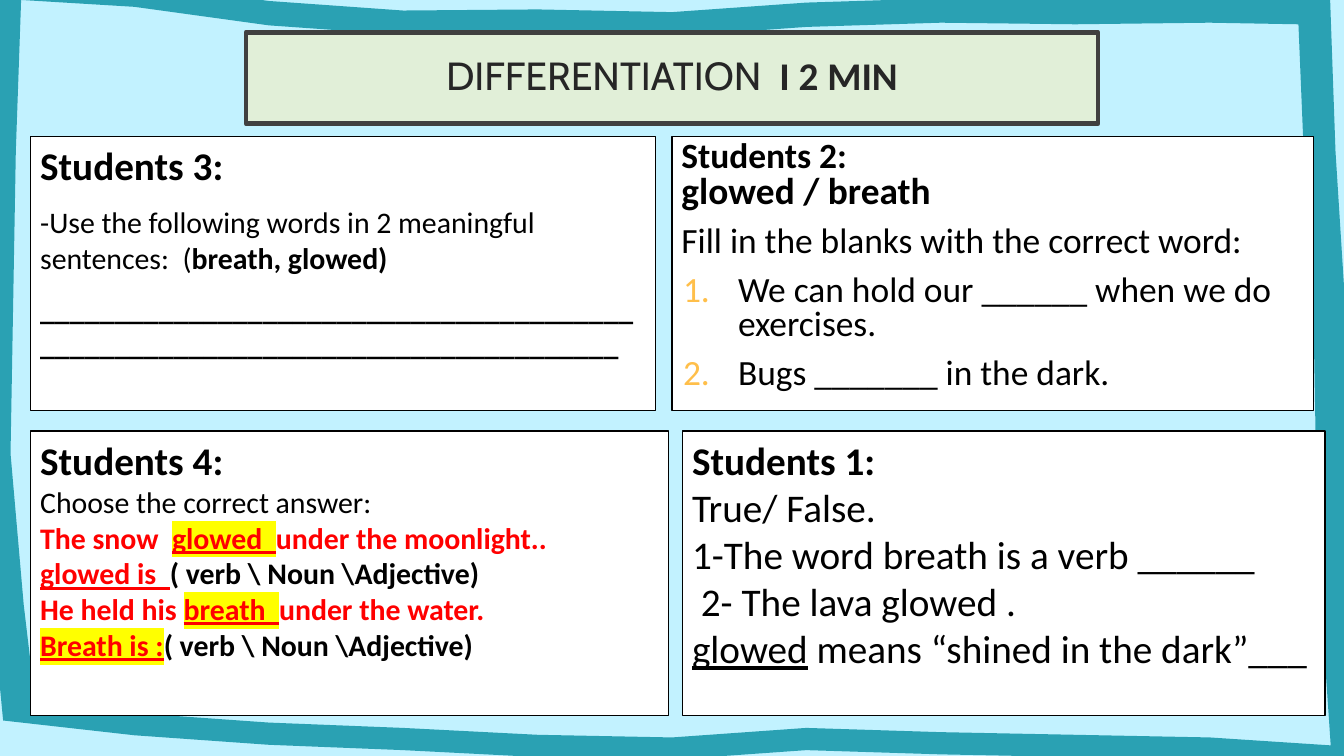
"""Build a classroom differentiation slide with four student task panels."""
from dataclasses import dataclass

from lxml import etree
from pptx import Presentation
from pptx import util as u
from pptx.dml.color import RGBColor
from pptx.enum import shapes, text
from pptx.oxml.ns import qn


@dataclass(frozen=True)
class Theme:
    sky: str = "C2F2FF"
    ribbon: str = "2AA1B3"
    banner: str = "E1EFD8"
    banner_line: str = "404040"
    banner_text: str = "262626"
    paper: str = "FFFFFF"
    ink: str = "000000"
    answer: str = "FF0000"
    marker: str = "FFFF00"
    number: str = "FFBF4A"
    display: str = "Cabin"
    body: str = "Calibri"
    large: int = 21
    medium: int = 20
    regular: int = 19
    small: int = 16


THEME = Theme()


def heading(group, size=THEME.large):
    return (size, "", [(f"Students {group}:", "bold")])


CHOICES = ("( verb \\ Noun \\Adjective)", "bold")
TITLE = [(THEME.large, "", [("DIFFERENTIATION ", "display"), (" I 2 MIN", "bold")])]
SENTENCE_WRITING = [
    heading(3),
    (THEME.small, "gap", [("-Use the following words in 2 meaningful  sentences:  (", ""),
                          ("breath, glowed)", "bold")]),
    (THEME.small, "gap", [("_" * 79, "bold")]),
]
FILL_IN_BLANKS = [
    heading(2, THEME.regular),
    (THEME.medium, "", [("glowed / breath", "bold")]),
    (THEME.regular, "gap", [("Fill in the blanks with the correct word:", "")]),
    (THEME.regular, "gap numbered", [("We can hold our ______ when we do exercises.", "")]),
    (THEME.regular, "gap numbered", [("Bugs _______ in the dark.", "")]),
]
WORD_CLASSES = [
    heading(4),
    (THEME.small, "", [("Choose the correct answer:", "")]),
    (THEME.small, "", [("The snow  ", "bold red"), ("glowed  ", "bold red underlined marked"),
                       ("under the moonlight..", "bold red")]),
    (THEME.small, "", [("glowed is  ", "bold red underlined"), CHOICES]),
    (THEME.small, "", [("He held his ", "bold red"), ("breath  ", "bold red underlined marked"),
                       ("under the water.", "bold red")]),
    (THEME.small, "", [("Breath is :", "bold red underlined marked"), CHOICES]),
]
TRUE_FALSE = [
    heading(1),
    (THEME.large, "", [("True/ False.", "")]),
    (THEME.large, "", [("1-The word breath is a verb ______", "")]),
    (THEME.large, "", [(" 2- The lava glowed .", "")]),
    (THEME.large, "", [("glowed", "underlined"), (" means “shined in the dark”___", "")]),
]

WIDTH, HEIGHT = 25.4, 14.29
BANNER_BOX = (4.65, 0.61, 16.1, 1.73)
ROWS = [
    {"top": 2.58, "height": 5.18, "panels": [(0.58, 11.81, SENTENCE_WRITING, 1),
                                             (12.7, 12.12, FILL_IN_BLANKS, 0.8)]},
    {"top": 8.15, "height": 5.38, "panels": [(0.58, 12.06, WORD_CLASSES, 1),
                                             (12.9, 12.14, TRUE_FALSE, 1)]},
]
# Depth of the ribbon's middle below each slide edge, at equal steps along that edge.
RIBBON_DEPTHS = {
    "top": [-0.23, -0.1, 0.25, 0.43, 0.41, 0.46, 0.28, 0.2, 0.23, 0.2, 0.23],
    "right": [0.56, 0.46, 0.28, 0.23, 0.13, -0.05],
    "bottom": [0.88, 0.6, 0.42, 0.32, 0.19, 0.14, 0.32, 0.24, 0.19, 0.14, -0.01],
    "left": [0.1, 0, -0.05, -0.1, 0.15, 0.36],
}
RIBBON_HALF_WIDTH = {"top": 0.23, "right": 0.3, "bottom": 0.21, "left": 0.3}


def rgb(color):
    return RGBColor.from_string(color)


def fill_with(shape, color):
    shape.shadow.inherit = False
    shape.fill.solid()
    shape.fill.fore_color.rgb = rgb(color)


def ribbon_edge(direction):
    """Return one closed edge of the ribbon, inner (1) or outer (-1), clockwise."""
    depth = {side: [middle + direction * RIBBON_HALF_WIDTH[side] for middle in middles]
             for side, middles in RIBBON_DEPTHS.items()}
    left, top = depth["left"], depth["top"]
    right = [WIDTH - inset for inset in depth["right"]]
    bottom = [HEIGHT - inset for inset in depth["bottom"]]
    columns, rows = len(top) - 1, len(left) - 1
    across = [WIDTH * step / columns for step in range(1, columns)]
    down = [HEIGHT * step / rows for step in range(1, rows)]
    top_side = list(zip([left[0], *across, right[0]], top))
    right_side = list(zip(right[1:-1], down))
    bottom_side = list(zip([left[-1], *across, right[-1]], bottom))
    left_side = list(zip(left[1:-1], down))
    outline = top_side + right_side + bottom_side[::-1] + left_side[::-1]
    return [(u.Cm(x), u.Cm(y)) for x, y in outline]


def add_ribbon(slide):
    outer, hole = ribbon_edge(-1), ribbon_edge(1)[::-1]
    builder = slide.shapes.build_freeform(*outer[0])
    builder.add_line_segments(outer[1:], close=True)
    builder.move_to(*hole[0])
    builder.add_line_segments(hole[1:], close=True)
    ribbon = builder.convert_to_shape()
    fill_with(ribbon, THEME.ribbon)
    ribbon.line.fill.background()


def add_color(parent, tag, color):
    holder = etree.SubElement(parent, qn(tag))
    etree.SubElement(holder, qn("a:srgbClr"), val=color)


def apply_styles(font, styles):
    if "bold" in styles:
        font.bold = True
    if "underlined" in styles:
        font.underline = True
    if "red" in styles:
        font.color.rgb = rgb(THEME.answer)
    if "display" in styles:
        font.name = THEME.display


def write_paragraph(paragraph, size, layout, runs, color):
    properties = paragraph._p.get_or_add_pPr()
    if "gap" in layout:
        paragraph.space_before = u.Pt(8)
    if "numbered" in layout:
        properties.set("marL", str(u.Cm(1.07)))
        properties.set("indent", str(u.Cm(-1.04)))
        add_color(properties, "a:buClr", THEME.number)
        etree.SubElement(properties, qn("a:buAutoNum"), type="arabicPeriod")
    font = paragraph.font
    font.size, font.name = u.Pt(size), THEME.body
    font.color.rgb = rgb(color)
    shared = set.intersection(*(set(styles.split()) for _, styles in runs))
    apply_styles(font, shared)
    for words, styles in runs:
        run = paragraph.add_run()
        run.text = words
        apply_styles(run.font, set(styles.split()) - shared)
        if "marked" in styles:
            add_color(run._r.get_or_add_rPr(), "a:highlight", THEME.marker)


def add_panel(slide, box, content, spacing, fill=THEME.paper, line=THEME.ink, weight=0.75,
              color=THEME.ink, insets=(0.18, 0.1), anchor=text.MSO_ANCHOR.TOP,
              align=text.PP_ALIGN.LEFT):
    panel = slide.shapes.add_shape(shapes.MSO_SHAPE.RECTANGLE, *map(u.Cm, box))
    fill_with(panel, fill)
    panel.line.color.rgb = rgb(line)
    panel.line.width = u.Pt(weight)
    frame = panel.text_frame
    frame.word_wrap = True
    frame.vertical_anchor = anchor
    frame.margin_left = frame.margin_right = u.Cm(insets[0])
    frame.margin_top = frame.margin_bottom = u.Cm(insets[1])
    for index, (size, layout, runs) in enumerate(content):
        paragraph = frame.add_paragraph() if index else frame.paragraphs[0]
        paragraph.alignment = align
        paragraph.line_spacing = float(spacing)
        write_paragraph(paragraph, size, layout, runs, color)


def main():
    deck = Presentation()
    deck.slide_width, deck.slide_height = u.Cm(WIDTH), u.Cm(HEIGHT)
    slide = deck.slides.add_slide(deck.slide_layouts[6])
    slide.background.fill.solid()
    slide.background.fill.fore_color.rgb = rgb(THEME.sky)
    add_ribbon(slide)
    add_panel(slide, BANNER_BOX, TITLE, 0.9, THEME.banner, THEME.banner_line, 2.5,
              THEME.banner_text, (0.38, 0.38), text.MSO_ANCHOR.MIDDLE, text.PP_ALIGN.CENTER)
    for row in ROWS:
        for left, width, content, spacing in row["panels"]:
            add_panel(slide, (left, row["top"], width, row["height"]), content, spacing)
    deck.save("out.pptx")


if __name__ == "__main__":
    main()
